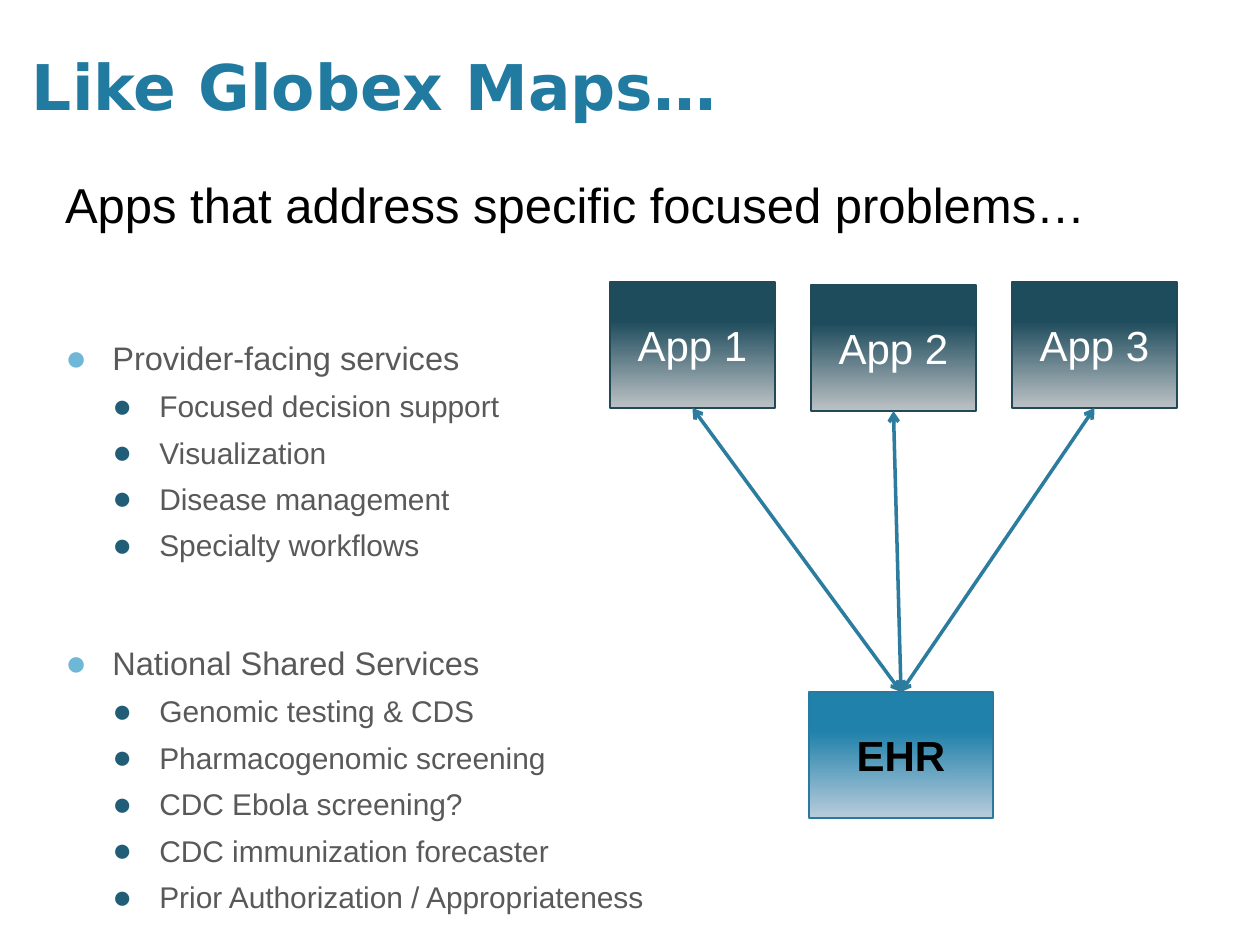
from lxml import etree
from pptx import Presentation
from pptx.dml.color import RGBColor
from pptx.enum.shapes import MSO_CONNECTOR, MSO_SHAPE
from pptx.enum.text import MSO_ANCHOR, PP_ALIGN
from pptx.oxml.ns import qn
from pptx.util import Emu, Pt

RECT = MSO_SHAPE.RECTANGLE
LINE = MSO_CONNECTOR.STRAIGHT
LEFT, CENTER = PP_ALIGN.LEFT, PP_ALIGN.CENTER
MIDDLE, BOTTOM, TOP = MSO_ANCHOR.MIDDLE, MSO_ANCHOR.BOTTOM, MSO_ANCHOR.TOP
SCALE = 914400 / 126

GROUPS = [
    ("Provider-facing services", [
        "Focused decision support", "Visualization",
        "Disease management", "Specialty workflows"]),
    ("National Shared Services", [
        "Genomic testing & CDS", "Pharmacogenomic screening",
        "CDC Ebola screening?", "CDC immunization forecaster",
        "Prior Authorization / Appropriateness"]),
]
APPS = [("App 1", 610, 282), ("App 2", 811, 285), ("App 3", 1012, 282)]


def px(n):
    return Emu(round(n * SCALE))


def rgb(color):
    return RGBColor.from_string(color)


def style(para, size, color, font="Arial", bold=False):
    for run in para.runs:
        run.font.size = Pt(size)
        run.font.name = font
        run.font.bold = bold
        run.font.color.rgb = rgb(color)


def add_text(slide, box, anchor):
    frame = slide.shapes.add_textbox(*map(px, box)).text_frame
    frame.word_wrap = True
    frame.vertical_anchor = anchor
    return frame


def add_title(slide, text, box, anchor, align, size, color, font, bold):
    frame = add_text(slide, box, anchor)
    frame.text = text
    para = frame.paragraphs[0]
    para.alignment = align
    style(para, size, color, font, bold)
    return frame


def add_bullet(para, indent, color):
    props = para._p.get_or_add_pPr()
    props.set("marL", str(px(indent)))
    props.set("indent", str(-px(47)))
    tint = etree.SubElement(props, qn("a:buClr"))
    etree.SubElement(tint, qn("a:srgbClr"), val=color)
    etree.SubElement(props, qn("a:buSzPct"), val="110000")
    etree.SubElement(props, qn("a:buFont"), typeface="Arial")
    etree.SubElement(props, qn("a:buChar"), char="●")


def add_list(slide, box):
    frame = add_text(slide, box, TOP)
    rows = []
    for i, (head, items) in enumerate(GROUPS):
        rows.append((head, 47, "6FB7D7", 18.6, 46 if i else 0))
        rows += [(item, 94, "215D77", 17.1, 6) for item in items]
    frame.text = "\n".join(row[0] for row in rows)
    for para, (_, indent, color, size, gap) in zip(frame.paragraphs, rows):
        para.space_before = Pt(gap)
        add_bullet(para, indent, color)
        style(para, size, "595959")


def add_box(slide, text, box, fade, edge, color, bold=False):
    shape = slide.shapes.add_shape(RECT, *map(px, box))
    shape.shadow.inherit = False
    shape.fill.gradient()
    shape.fill.gradient_angle = 270
    for stop, place, tone in zip(shape.fill.gradient_stops, (0.31, 1), fade):
        stop.position = place
        stop.color.rgb = rgb(tone)
    shape.line.color.rgb = rgb(edge)
    shape.line.width = Pt(1)
    frame = shape.text_frame
    frame.text = text
    frame.vertical_anchor = MIDDLE
    frame.paragraphs[0].alignment = CENTER
    style(frame.paragraphs[0], 24, color, bold=bold)
    return shape


def add_link(slide, start, end):
    link = slide.shapes.add_connector(LINE, 0, 0, 0, 0)
    link.begin_connect(start, 2)
    link.end_connect(end, 0)
    link.line.color.rgb = rgb("2C7C9F")
    link.line.width = Pt(2)
    line = link.line._get_or_add_ln()
    for tag in ("a:headEnd", "a:tailEnd"):
        etree.SubElement(line, qn(tag), type="arrow")
    etree.SubElement(link._element.spPr, qn("a:effectLst"))


def main():
    deck = Presentation()
    deck.slide_width, deck.slide_height = px(1260), px(945)
    slide = deck.slides.add_slide(deck.slide_layouts[6])
    add_title(slide, "Apps that address specific focused problems…",
              (10, 168, 1130, 72), BOTTOM, CENTER, 28, "000000", "Arial", False)
    add_list(slide, (53, 332, 1164, 590))
    ehr = add_box(slide, "EHR", (809, 692, 184, 126),
                  ("2081AB", "B8CCDC"), "287A9E", "000000", True)
    apps = [add_box(slide, name, (x, y, 165, 126),
                    ("1F4C5D", "BCC2C5"), "224957", "FFFFFF")
            for name, x, y in APPS]
    for app in apps:
        add_link(slide, app, ehr)
    title = add_title(slide, "Like Globex Maps…", (32, 49, 828, 72),
                      MIDDLE, LEFT, 36, "217AA0", "DejaVu Sans", True)
    title.margin_left = 0
    deck.save("out.pptx")


if __name__ == "__main__":
    main()
